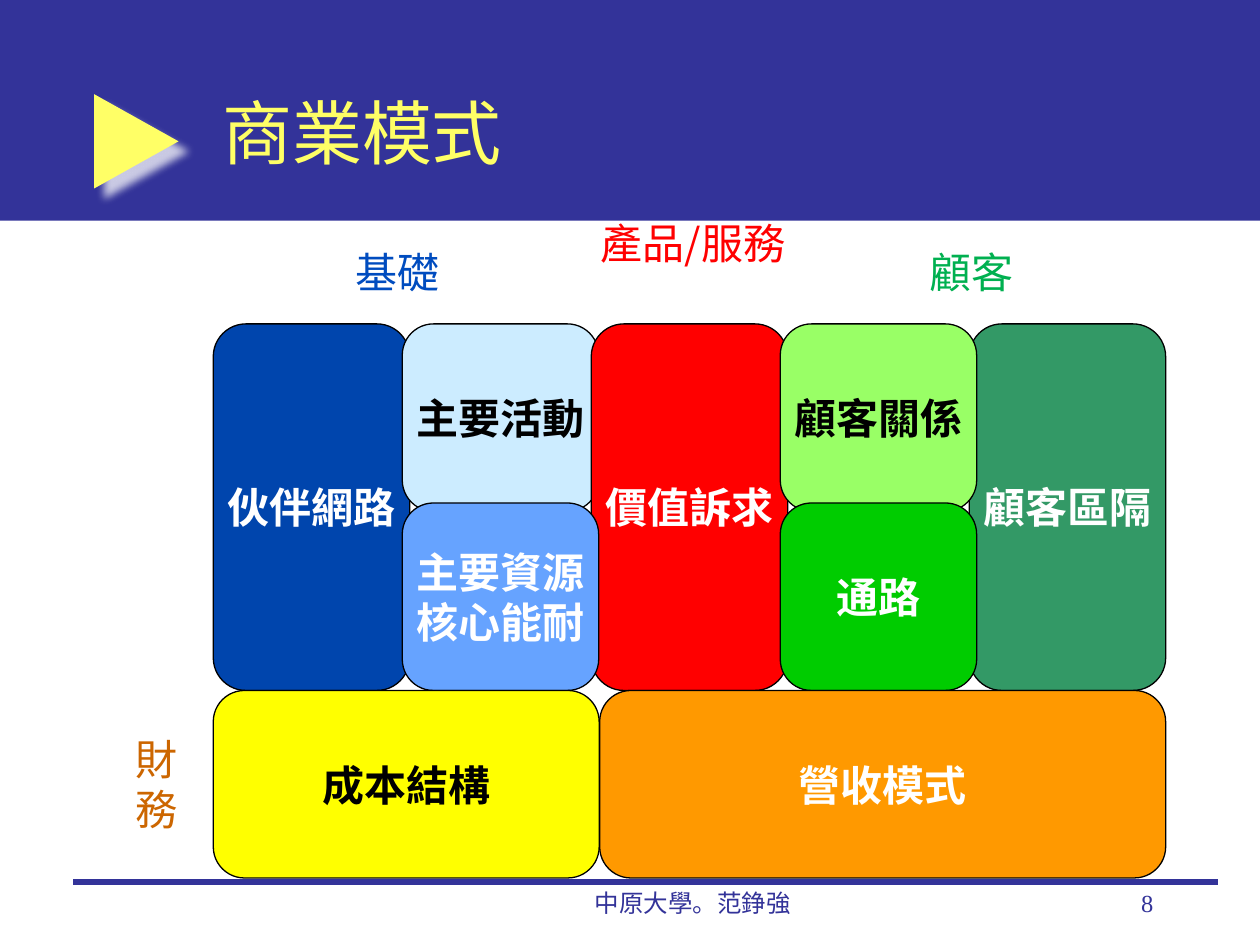
from lxml import etree
from pptx import Presentation
from pptx.dml.color import RGBColor
from pptx.enum.shapes import MSO_CONNECTOR, MSO_SHAPE
from pptx.enum.text import MSO_ANCHOR, PP_ALIGN
from pptx.oxml import parse_xml
from pptx.oxml.ns import nsdecls, qn
from pptx.util import Cm, Pt

RECTANGLE = MSO_SHAPE.RECTANGLE
ROUNDED = MSO_SHAPE.ROUNDED_RECTANGLE
ARROW = MSO_SHAPE.RIGHT_ARROW
STRAIGHT = MSO_CONNECTOR.STRAIGHT
LEFT, CENTER, RIGHT = PP_ALIGN.LEFT, PP_ALIGN.CENTER, PP_ALIGN.RIGHT
TOP, MIDDLE = MSO_ANCHOR.TOP, MSO_ANCHOR.MIDDLE

SERIF, SANS, CJK = "Times New Roman", "Arial", "Noto Sans CJK SC"
NAVY, PALE_YELLOW, WHITE, BLACK = "333399", "FFFF66", "FFFFFF", "000000"

GRID_LEFT, GRID_TOP = 4.3, 6.53
COLUMN_STEP, ROW_STEP = 3.81, 3.61
CARD_WIDTH, TALL, SHORT = 3.96, 7.39, 3.78
FINANCE_TOP = GRID_TOP + TALL

CARDS = [
    ("伙伴網路", 0, 0, TALL, "0045AD", WHITE),
    ("主要活動", 1, 0, SHORT, "CCECFF", BLACK),
    ("價值訴求", 2, 0, TALL, "FF0000", WHITE),
    ("顧客區隔", 4, 0, TALL, "339966", WHITE),
    ("主要資源\n核心能耐", 1, 1, SHORT, "66A3FF", WHITE),
    ("顧客關係", 3, 0, SHORT, "99FF66", BLACK),
    ("通路", 3, 1, SHORT, "00CC00", WHITE),
]
FINANCE_CARDS = [
    ("成本結構", GRID_LEFT, 7.78, "FFFF00", BLACK),
    ("營收模式", 12.09, 11.41, "FF9900", WHITE),
]
LABELS = [
    ("基礎", 6.91, 4.85, 2.21, 1.27, LEFT, "004CBF"),
    ("顧客", 18.49, 4.85, 2.21, 1.27, LEFT, "00B050"),
    ("產品/服務", 11.81, 4.27, 4.32, 2.29, CENTER, "FF0000"),
    ("財\n務", 2.49, 14.66, 1.37, 2.31, LEFT, "CC6600"),
]


def rgb(value):
    """Return the colour for a hex string."""
    return RGBColor.from_string(value)


def write_text(shape, text, size, font, color, align=LEFT, anchor=TOP, bold=False, wrap=True):
    """Write one paragraph per line of text in a single style."""
    frame = shape.text_frame
    frame.word_wrap = wrap
    frame.vertical_anchor = anchor
    frame.text = text
    for paragraph in frame.paragraphs:
        paragraph.alignment = align
        paragraph.font.size = Pt(size)
        paragraph.font.name = font
        paragraph.font.bold = bold
        paragraph.font.color.rgb = rgb(color)


def add_text(slide, text, left, top, width, height, *style, **options):
    """Add a text box."""
    box = slide.shapes.add_textbox(Cm(left), Cm(top), Cm(width), Cm(height))
    write_text(box, text, *style, **options)


def add_block(slide, kind, left, top, width, height, fill):
    """Add a filled shape without outline or shadow."""
    shape = slide.shapes.add_shape(kind, Cm(left), Cm(top), Cm(width), Cm(height))
    shape.shadow.inherit = False
    shape.fill.solid()
    shape.fill.fore_color.rgb = rgb(fill)
    shape.line.fill.background()
    return shape


def add_card(slide, text, left, top, width, height, fill, color):
    """Add an outlined rounded card with a bold centred caption."""
    card = add_block(slide, ROUNDED, left, top, width, height, fill)
    card.line.color.rgb = rgb(BLACK)
    card.line.width = Pt(0.75)
    write_text(card, text, 24, SERIF, color, CENTER, MIDDLE, bold=True, wrap=False)


def add_title_marker(slide):
    """Add the triangular marker with its soft white shadow."""
    marker = add_block(slide, ARROW, 1.9, 1.9, 1.7, 1.9, PALE_YELLOW)
    marker.adjustments[0] = 0.38
    marker.adjustments[1] = 1
    effects = marker._element.spPr.find(qn("a:effectLst"))
    effects.append(parse_xml(
        f'<a:outerShdw {nsdecls("a")} blurRad="{Pt(5)}" dist="{Pt(8.5)}" dir="2700000" '
        f'algn="ctr" rotWithShape="0"><a:srgbClr val="{WHITE}"><a:alpha val="75000"/>'
        '</a:srgbClr></a:outerShdw>'))


def add_rule(slide, left, right, top):
    """Add the horizontal footer rule."""
    rule = slide.shapes.add_connector(STRAIGHT, Cm(left), Cm(top), Cm(right), Cm(top))
    rule.line.color.rgb = rgb(NAVY)
    rule.line.width = Pt(3)
    etree.SubElement(rule._element.spPr, qn("a:effectLst"))


def main():
    """Build and save the business model slide."""
    presentation = Presentation()
    presentation.slide_width, presentation.slide_height = Cm(25.4), Cm(19.05)
    slide = presentation.slides.add_slide(presentation.slide_layouts[6])

    add_block(slide, RECTANGLE, 0, 0, 25.4, 4.45, NAVY)
    add_title_marker(slide)
    add_rule(slide, 1.48, 24.55, 17.78)
    add_text(slide, "中原大學。范錚強", 9.95, 17.78, 8.04, 1.27, 14, SERIF, NAVY, CENTER)
    add_text(slide, "8", 18.2, 17.78, 5.3, 1.27, 14, SERIF, NAVY, RIGHT)
    add_text(slide, "商業模式", 4.23, 1.06, 19.26, 3.18, 40, SANS, PALE_YELLOW, anchor=MIDDLE)

    for text, column, row, height, fill, color in CARDS:
        left = GRID_LEFT + column * COLUMN_STEP
        top = GRID_TOP + row * ROW_STEP
        add_card(slide, text, left, top, CARD_WIDTH, height, fill, color)
    for text, left, width, fill, color in FINANCE_CARDS:
        add_card(slide, text, left, FINANCE_TOP, width, SHORT, fill, color)
    for text, left, top, width, height, align, color in LABELS:
        add_text(slide, text, left, top, width, height, 24, CJK, color, align)

    presentation.save("out.pptx")


if __name__ == "__main__":
    main()
